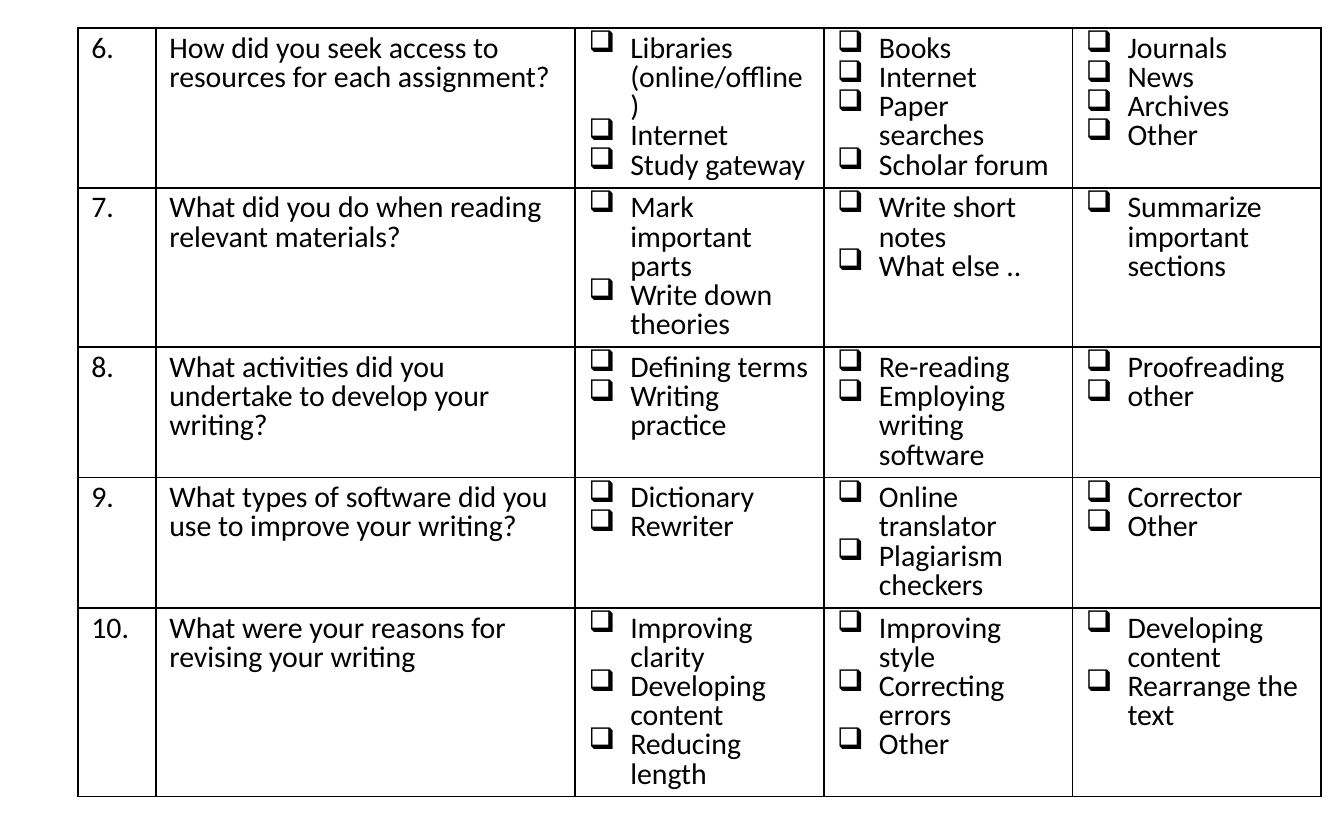
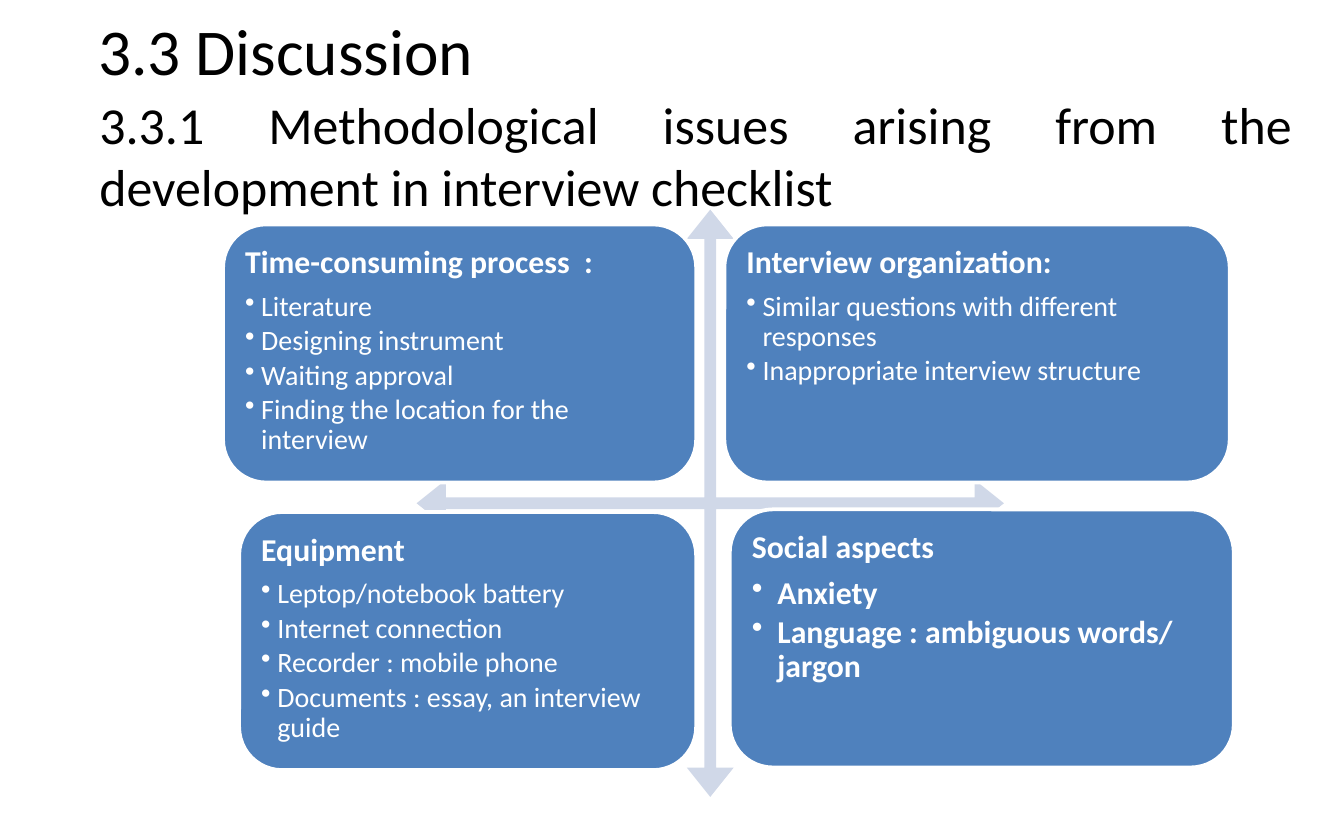
from lxml.etree import SubElement
from pptx import Presentation
from pptx.dml.color import RGBColor
from pptx.enum.shapes import MSO_SHAPE as Shape
from pptx.enum.text import MSO_ANCHOR as Anchor, PP_ALIGN as Align
from pptx.oxml import parse_xml
from pptx.oxml.ns import nsdecls, qn
from pptx.util import Inches, Pt

BLACK, WHITE, BLUE, PALE = "000000", "FFFFFF", "4F81BD", "D0D8E8"
FONT = "Calibri"


def color(hex_text):
    return RGBColor.from_string(hex_text)


def write(para, text, size, ink=BLACK, bold=False, bullet=None, indent=0, **layout):
    """Fill one paragraph; layout holds paragraph attributes."""
    if bullet:
        props = para._p.get_or_add_pPr()
        props.set("marL", str(Inches(indent)))
        props.set("indent", str(-Inches(indent)))
        SubElement(props, qn("a:buChar")).set("char", bullet)
    for name, value in layout.items():
        setattr(para, name, value)
    span = para.add_run()
    span.text = text
    for name, value in {"name": FONT, "size": Pt(size), "bold": bold}.items():
        setattr(span.font, name, value)
    span.font.color.rgb = color(ink)


deck = Presentation()
deck.slide_width, deck.slide_height = Inches(10), Inches(6.25)

# Slide 1: interview checklist, questions 6 to 10
questions = [
    ("How did you seek access to resources for each assignment?",
     ["Libraries (online/offline)", "Internet", "Study gateway"],
     ["Books", "Internet", "Paper searches", "Scholar forum"],
     ["Journals", "News", "Archives", "Other"]),
    ("What did you do when reading relevant materials?",
     ["Mark important parts", "Write down theories"],
     ["Write short notes", "What else .."],
     ["Summarize important sections"]),
    ("What activities did you undertake to develop your writing?",
     ["Defining terms", "Writing practice"],
     ["Re-reading", "Employing writing software"],
     ["Proofreading", "other"]),
    ("What types of software did you use to improve your writing?",
     ["Dictionary", "Rewriter"],
     ["Online translator", "Plagiarism checkers"],
     ["Corrector", "Other"]),
    ("What were your reasons for revising your writing",
     ["Improving clarity", "Developing content", "Reducing length"],
     ["Improving style", "Correcting errors", "Other"],
     ["Developing content", "Rearrange the text"]),
]
column_widths = [0.58, 3.12, 1.85, 1.85, 1.85]

page = deck.slides.add_slide(deck.slide_layouts[6])
frame = page.shapes.add_table(len(questions), len(column_widths), Inches(0.58),
                              Inches(0.21), Inches(9.25), Inches(5.62))
table = frame.table
table.first_row = table.horz_banding = False
for column, width in zip(table.columns, column_widths):
    column.width = Inches(width)
for row in table.rows:
    row.height = Inches(0.41)
frame.height = Inches(5.62)

for row, (number, (question, *choices)) in enumerate(enumerate(questions, 6)):
    for col, entries in enumerate([[f"{number}."], [question], *choices]):
        cell = table.cell(row, col)
        marks = {"bullet": "❑", "indent": 0.31} if col > 1 else {}
        for index, entry in enumerate(entries):
            text_frame = cell.text_frame
            para = text_frame.add_paragraph() if index else text_frame.paragraphs[0]
            write(para, entry, 16, line_spacing=0.8, **marks)
        # Black border on all sides, no fill
        cell_props = cell._tc.get_or_add_tcPr()
        for side in ("lnL", "lnR", "lnT", "lnB"):
            cell_props.append(parse_xml(
                f'<a:{side} {nsdecls("a")} w="{Pt(1)}"><a:solidFill>'
                f'<a:srgbClr val="{BLACK}"/></a:solidFill></a:{side}>'))
        cell.fill.background()

# Slide 2: title and subtitle
page = deck.slides.add_slide(deck.slide_layouts[5])
title = page.shapes.title
subtitle = page.shapes.add_textbox(Inches(0.64), Inches(0.71), Inches(9.08), Inches(0.88))
places = {"left": Inches(0.63), "top": Inches(0.04),
          "width": Inches(8.83), "height": Inches(0.65)}
for name, value in places.items():
    setattr(title, name, value)
for box in (title, subtitle):
    box.text_frame.word_wrap = True
    box.text_frame.vertical_anchor = Anchor.MIDDLE
write(title.text_frame.paragraphs[0], "3.3 Discussion", 35, alignment=Align.LEFT)
write(subtitle.text_frame.paragraphs[0],
      "3.3.1 Methodological issues arising from the development in interview checklist",
      27.8, alignment=Align.JUSTIFY)

# Four-way arrow behind the cards
arrow = page.shapes.add_shape(Shape.QUAD_ARROW, Inches(3.1), Inches(1.56),
                              Inches(4.37), Inches(4.37))
arrow.shadow.inherit = False
arrow.fill.solid()
arrow.fill.fore_color.rgb = color(PALE)
arrow.line.fill.background()
for index, value in enumerate([0.02, 0.04, 0.05]):
    arrow.adjustments[index] = value

# Cards: left, top, width, heading, item format, items
plain = {"size": 15, "bold": False, "indent": 0.12}
strong = {"size": 17, "bold": True, "indent": 0.19}
cards = [
    (1.66, 1.67, 3.52, "Time-consuming process  :", plain,
     ["Literature", "Designing instrument", "Waiting approval",
      "Finding the location for the interview"]),
    (5.39, 1.67, 3.76, "Interview organization:", plain,
     ["Similar questions with different responses",
      "Inappropriate interview structure"]),
    (5.43, 3.79, 3.75, "Social aspects", strong,
     ["Anxiety", "Language : ambiguous words/ jargon"]),
    (1.78, 3.81, 3.4, "Equipment", plain,
     ["Leptop/notebook battery", "Internet connection",
      "Recorder : mobile phone", "Documents : essay, an interview guide"]),
]
for left, top, width, heading, item_format, items in cards:
    card = page.shapes.add_shape(Shape.ROUNDED_RECTANGLE, Inches(left), Inches(top),
                                 Inches(width), Inches(1.92))
    card.shadow.inherit = False
    card.fill.solid()
    card.fill.fore_color.rgb = color(BLUE)
    card.line.color.rgb = color(WHITE)
    card.line.width = Pt(2)
    text_frame = card.text_frame
    text_frame.word_wrap = True
    text_frame.vertical_anchor = Anchor.TOP
    for side in ("left", "top", "right", "bottom"):
        setattr(text_frame, f"margin_{side}", Inches(0.07))
    shared = {"ink": WHITE, "alignment": Align.LEFT, "line_spacing": 0.9}
    write(text_frame.paragraphs[0], heading, 17, bold=True, space_after=Pt(6), **shared)
    for item in items:
        write(text_frame.add_paragraph(), item, bullet="•", level=1,
              space_after=Pt(item_format["size"] * 0.15), **item_format, **shared)

deck.save("out.pptx")
